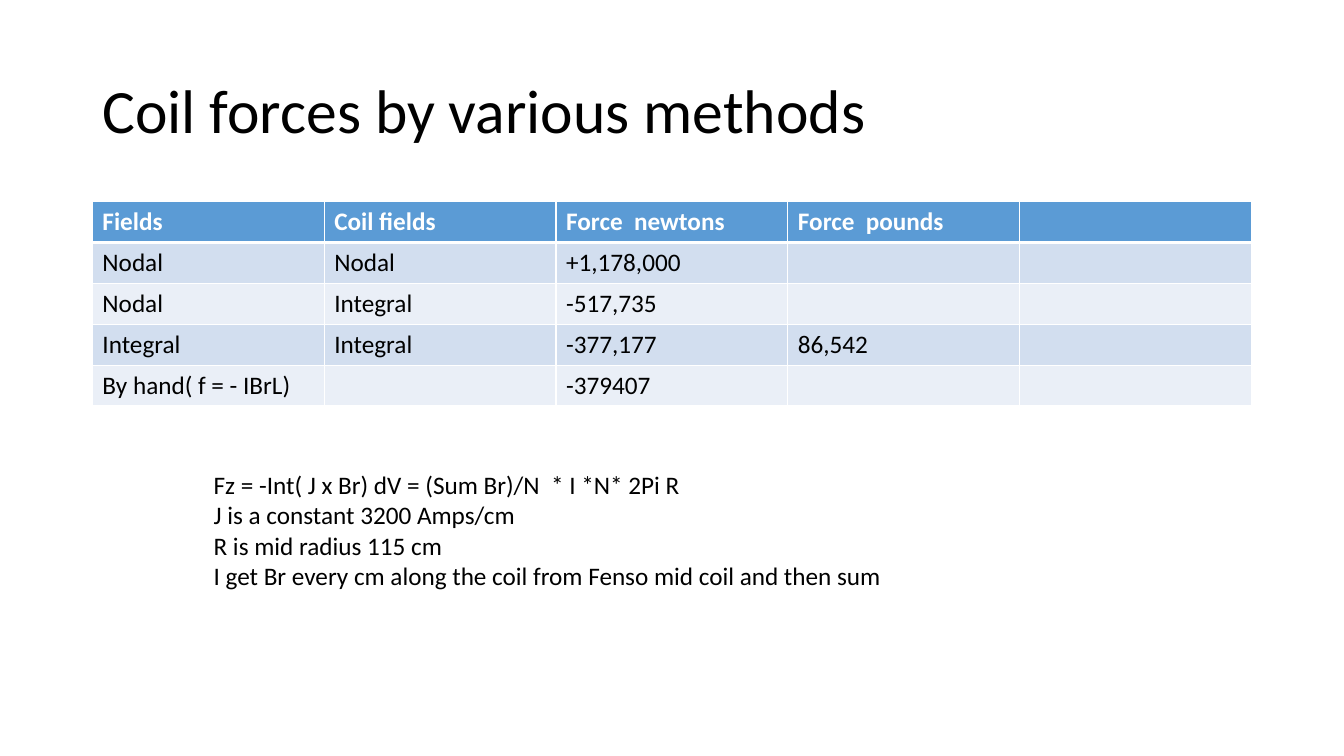
from dataclasses import dataclass

from pptx import Presentation, util as u
from pptx.dml.color import RGBColor
from pptx.enum import text
from pptx.oxml import parse_xml
from pptx.oxml.ns import nsdecls


@dataclass(frozen=True)
class Theme:
    font: str = "Calibri"
    ink: str = "000000"
    paper: str = "FFFFFF"
    header: str = "5B9BD5"
    bands: tuple = ("D2DEEF", "EAEFF7")
    title_size: int = 44
    body_size: int = 18
    thin: int = 1
    thick: int = 3


class SlideBuilder:
    COLUMNS, ROWS = 160, 90

    def __init__(self, deck, theme):
        self.deck = deck
        self.theme = theme
        self.page = deck.slides.add_slide(deck.slide_layouts[5])

    def place(self, left, top, width, height):
        column = self.deck.slide_width / self.COLUMNS
        row = self.deck.slide_height / self.ROWS
        return [round(n * step) for n, step in
                zip((left, top, width, height), (column, row, column, row))]

    def style(self, para, size, color, bold=False):
        para.alignment = text.PP_ALIGN.LEFT
        para.font.name = self.theme.font
        para.font.size = u.Pt(size)
        para.font.bold = bold
        para.font.color.rgb = RGBColor.from_string(color)

    def title(self, words, *area):
        box = self.page.shapes.title
        box.left, box.top, box.width, box.height = self.place(*area)
        frame = box.text_frame
        frame.text = words
        frame.vertical_anchor = text.MSO_ANCHOR.MIDDLE
        para = frame.paragraphs[0]
        para.line_spacing = 0.9
        self.style(para, self.theme.title_size, self.theme.ink)

    def border(self, cell, side, width):
        cell._tc.get_or_add_tcPr().append(parse_xml(
            f'<a:ln{side} {nsdecls("a")} w="{u.Pt(width)}"><a:solidFill>'
            f'<a:srgbClr val="{self.theme.paper}"/></a:solidFill></a:ln{side}>'))

    def table(self, records, *area):
        theme = self.theme
        left, top, width, height = self.place(*area)
        grid = self.page.shapes.add_table(
            len(records), len(records[0]), left, top, width, height).table
        grid.horz_banding = False
        for r, record in enumerate(records):
            is_header = r == 0
            fill = theme.header if is_header else theme.bands[(r - 1) % 2]
            color = theme.paper if is_header else theme.ink
            widths = {"L": theme.thin, "R": theme.thin,
                      "T": theme.thick if r == 1 else theme.thin,
                      "B": theme.thick if is_header else theme.thin}
            for c, words in enumerate(record):
                cell = grid.cell(r, c)
                cell.text = words
                self.style(cell.text_frame.paragraphs[0], theme.body_size, color, is_header)
                for side, line_width in widths.items():
                    self.border(cell, side, line_width)
                cell.fill.solid()
                cell.fill.fore_color.rgb = RGBColor.from_string(fill)

    def text_lines(self, lines, *area):
        frame = self.page.shapes.add_textbox(*self.place(*area)).text_frame
        frame.word_wrap = True
        frame.auto_size = text.MSO_AUTO_SIZE.SHAPE_TO_FIT_TEXT
        frame.text = "\n".join(lines)
        for para in frame.paragraphs:
            self.style(para, self.theme.body_size, self.theme.ink)


FORCES = [
    ("Fields", "Coil fields", "Force  newtons", "Force  pounds", ""),
    ("Nodal", "Nodal", "+1,178,000", "", ""),
    ("Nodal", "Integral", "-517,735", "", ""),
    ("Integral", "Integral", "-377,177", "86,542", ""),
    ("By hand( f = - IBrL)", "", "-379407", "", ""),
]
METHOD = [
    "Fz = -Int( J x Br) dV = (Sum Br)/N  * I *N* 2Pi R",
    "J is a constant 3200 Amps/cm",
    "R is mid radius 115 cm",
    "I get Br every cm along the coil from Fenso mid coil and then sum",
]


def main():
    deck = Presentation()
    deck.slide_width, deck.slide_height = u.Inches(13.33), u.Inches(7.5)
    slide = SlideBuilder(deck, Theme())
    slide.title("Coil forces by various methods", 11, 4.8, 138, 17.4)
    slide.table(FORCES, 11, 24, 138, 24.33)
    slide.text_lines(METHOD, 24.25, 55.3, 91.4, 15.75)
    deck.save("out.pptx")


if __name__ == "__main__":
    main()
